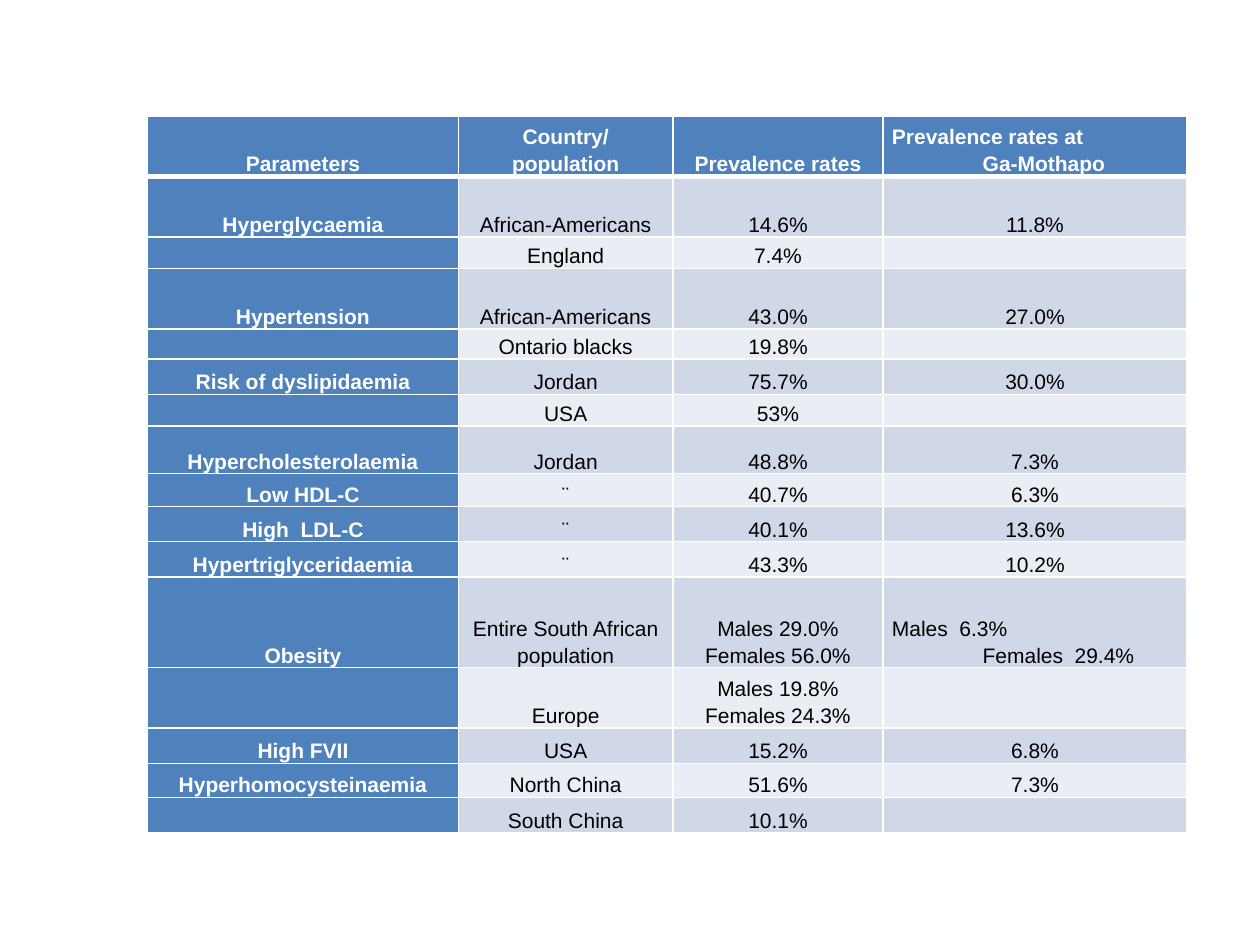
from lxml.etree import SubElement
from pptx import Presentation
from pptx.dml.color import RGBColor
from pptx.enum.text import MSO_ANCHOR, PP_ALIGN
from pptx.oxml.ns import qn
from pptx.util import Inches, Pt

BLUE, BAND, PALE = "4F81BD", "D0D8E8", "E9EDF4"
WHITE, BLACK = "FFFFFF", "000000"
LOOSE, SINGLE, EXACT = 1.15, 1.0, Pt(13.2)
STEP = Inches(0.72)  # indent of the second line in stepped cells

COLS = [2.47, 1.7, 1.67, 2.41]
# height, line spacing, cell texts; a line break starts a new paragraph
ROWS = [
    (0.48, LOOSE, ["Parameters", "Country/ population", "Prevalence rates",
                   "Prevalence rates at\nGa-Mothapo"]),
    (0.48, LOOSE, ["Hyperglycaemia", "African-Americans", "14.6%", "11.8%"]),
    (0.25, LOOSE, ["", "England", "7.4%", ""]),
    (0.48, LOOSE, ["Hypertension", "African-Americans", "43.0%", "27.0%"]),
    (0.24, LOOSE, ["", "Ontario blacks", "19.8%", ""]),
    (0.28, SINGLE, ["Risk of dyslipidaemia", "Jordan", "75.7%", "30.0%"]),
    (0.25, SINGLE, ["", "USA", "53%", ""]),
    (0.38, EXACT, ["Hypercholesterolaemia", "Jordan", "48.8%", "7.3%"]),
    (0.26, SINGLE, ["Low HDL-C", "¨", "40.7%", "6.3%"]),
    (0.28, SINGLE, ["High  LDL-C", "¨", "40.1%", "13.6%"]),
    (0.28, SINGLE, ["Hypertriglyceridaemia", "¨", "43.3%", "10.2%"]),
    (0.72, LOOSE, ["Obesity", "Entire South African population",
                   "Males 29.0%\nFemales 56.0%", "Males  6.3%\nFemales  29.4%"]),
    (0.48, LOOSE, ["", "Europe", "Males 19.8%\nFemales 24.3%", ""]),
    (0.28, LOOSE, ["High FVII", "USA", "15.2%", "6.8%"]),
    (0.27, LOOSE, ["Hyperhomocysteinaemia", "North China", "51.6%", "7.3%"]),
    (0.28, LOOSE, ["", "South China", "10.1%", ""]),
]


def rgb(value):
    return RGBColor.from_string(value)


def set_borders(cell, header):
    tcPr = cell._tc.get_or_add_tcPr()
    for side in "LRTB":
        width = 3 if header and side == "B" else 1
        ln = SubElement(tcPr, qn(f"a:ln{side}"), w=str(Pt(width)))
        SubElement(SubElement(ln, qn("a:solidFill")), qn("a:srgbClr"), val=WHITE)


def write_text(cell, text, spacing, strong, stepped):
    """Fill a cell; a stepped cell sets its lines left, the second one indented."""
    tf = cell.text_frame
    for i, line in enumerate(text.split("\n")):
        p = tf.paragraphs[0] if i == 0 else tf.add_paragraph()
        p.alignment = PP_ALIGN.LEFT if stepped else PP_ALIGN.CENTER
        p.line_spacing = spacing
        if stepped and i:
            p._p.get_or_add_pPr().set("marL", str(STEP))
        if not line:
            SubElement(p._p, qn("a:endParaRPr"), sz="1200")
            continue
        r = p.add_run()
        r.text = line
        r.font.name, r.font.size, r.font.bold = "Arial", Pt(12), strong
        r.font.color.rgb = rgb(WHITE if strong else BLACK)


def add_prevalence_table(s, left, top):
    frame = s.shapes.add_table(len(ROWS), len(COLS), left, top, Inches(sum(COLS)),
                               Inches(sum(row[0] for row in ROWS)))
    table = frame.table
    for column, width in zip(table.columns, COLS):
        column.width = Inches(width)
    for i, (height, spacing, texts) in enumerate(ROWS):
        table.rows[i].height = Inches(height)
        for j, text in enumerate(texts):
            cell = table.cell(i, j)
            strong = i == 0 or j == 0
            set_borders(cell, header=i == 0)
            cell.fill.solid()
            cell.fill.fore_color.rgb = rgb(BLUE if strong else BAND if i % 2 else PALE)
            cell.margin_left = cell.margin_right = Inches(0.07)
            cell.margin_top = cell.margin_bottom = 0
            cell.vertical_anchor = MSO_ANCHOR.BOTTOM
            write_text(cell, text, spacing, strong, stepped=j == 3 and "\n" in text)


def main():
    prs = Presentation()
    prs.slide_width, prs.slide_height = Inches(10), Inches(7.5)
    s = prs.slides.add_slide(prs.slide_layouts[6])
    add_prevalence_table(s, Inches(1.17), Inches(0.92))
    prs.save("out.pptx")


if __name__ == "__main__":
    main()
